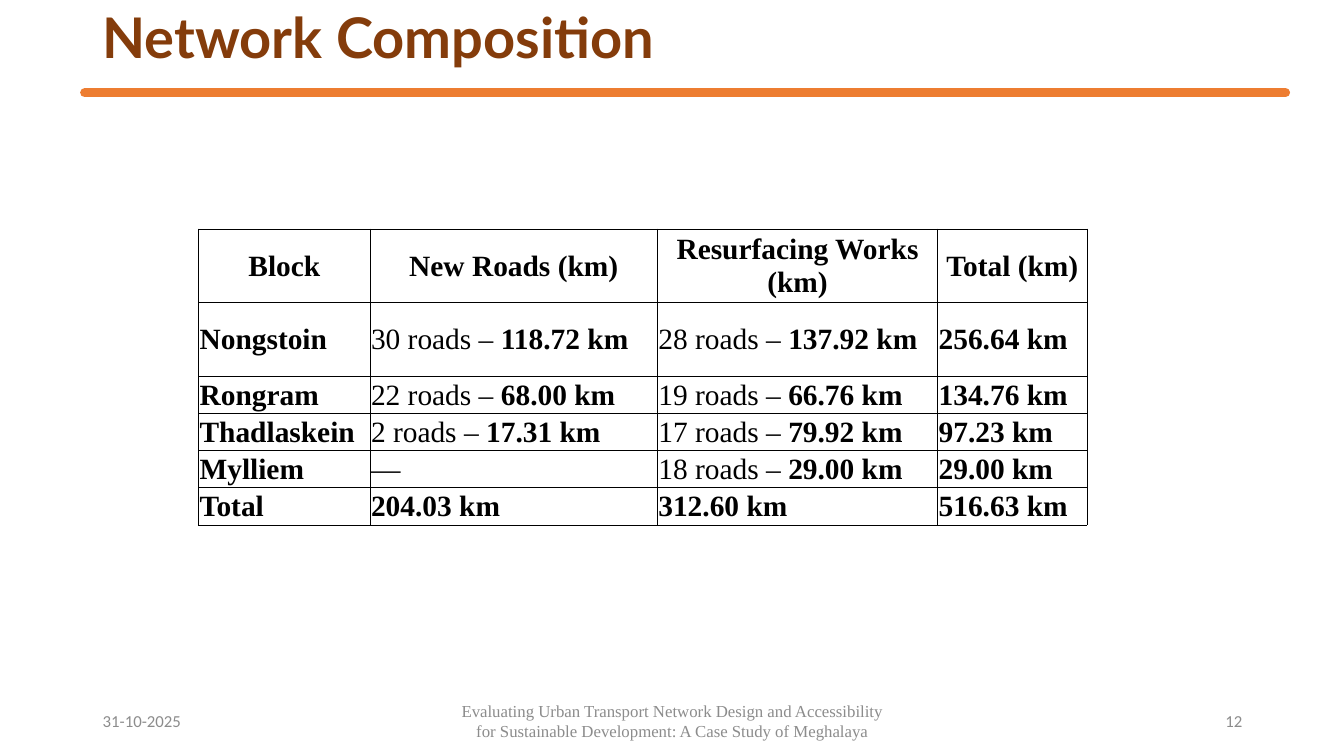
from dataclasses import dataclass

from pptx import Presentation
from pptx.dml.color import RGBColor
from pptx.enum.shapes import MSO_CONNECTOR
from pptx.enum.text import MSO_ANCHOR, PP_ALIGN
from pptx.oxml.ns import qn
from pptx.util import Inches, Pt
from lxml import etree

LEFT, CENTER, RIGHT = PP_ALIGN.LEFT, PP_ALIGN.CENTER, PP_ALIGN.RIGHT
MIDDLE = MSO_ANCHOR.MIDDLE
STRAIGHT = MSO_CONNECTOR.STRAIGHT


@dataclass(frozen=True)
class Theme:
    title: str = "843C0B"
    rule: str = "ED7D31"
    footer: str = "8C8C8C"
    ink: str = "000000"
    title_font: str = "Lato"
    body_font: str = "Calibri"
    table_font: str = "Times New Roman"
    title_size: int = 40
    table_size: int = 21
    footer_size: int = 12
    rule_width: float = 6.5
    border_width: float = 0.5


THEME = Theme()

COLUMNS = [1.7, 2.85, 2.78, 1.48]
ROWS = [0.73, 0.73, 0.37, 0.37, 0.37, 0.37]
NETWORK = [
    ["Block", "New Roads (km)", "Resurfacing Works (km)", "Total (km)"],
    ["Nongstoin", "30 roads – 118.72 km", "28 roads – 137.92 km", "256.64 km"],
    ["Rongram", "22 roads – 68.00 km", "19 roads – 66.76 km", "134.76 km"],
    ["Thadlaskein", "2 roads – 17.31 km", "17 roads – 79.92 km", "97.23 km"],
    ["Mylliem", "—", "18 roads – 29.00 km", "29.00 km"],
    ["Total", "204.03 km", "312.60 km", "516.63 km"],
]


def style_run(r, font, size, color, bold=False):
    r.font.name = font
    r.font.size = Pt(size)
    r.font.bold = bold
    r.font.color.rgb = RGBColor.from_string(color)


def add_text(s, box, text, font, size, color, align=LEFT, bold=False, spacing=1.0):
    tf = s.shapes.add_textbox(*map(Inches, box)).text_frame
    tf.word_wrap = True
    tf.vertical_anchor = MIDDLE
    p = tf.paragraphs[0]
    p.text = text
    p.alignment = align
    p.line_spacing = spacing
    style_run(p.runs[0], font, size, color, bold)


def add_rule(s, left, right, y):
    line = s.shapes.add_connector(STRAIGHT, Inches(left), Inches(y), Inches(right), Inches(y))
    line.line.color.rgb = RGBColor.from_string(THEME.rule)
    line.line.width = Pt(THEME.rule_width)
    spPr = line._element.spPr
    spPr.find(qn("a:ln")).set("cap", "rnd")
    etree.SubElement(spPr, qn("a:effectLst"))


def add_borders(cell):
    tcPr = cell._tc.get_or_add_tcPr()
    for side in ("a:lnL", "a:lnR", "a:lnT", "a:lnB"):
        ln = etree.SubElement(tcPr, qn(side), w=str(Pt(THEME.border_width)))
        fill = etree.SubElement(ln, qn("a:solidFill"))
        etree.SubElement(fill, qn("a:srgbClr"), val=THEME.ink)


def split_count(text):
    count, dash, length = text.partition("– ")
    if dash:
        return [(count + dash, False), (length, True)]
    return [(text, text != "—")]


def fill_cell(cell, text, align):
    add_borders(cell)
    cell.fill.background()
    cell.vertical_anchor = MIDDLE
    cell.margin_left = cell.margin_right = cell.margin_top = Inches(0.01)
    cell.margin_bottom = 0
    p = cell.text_frame.paragraphs[0]
    p.alignment = align
    for part, bold in split_count(text):
        r = p.add_run()
        r.text = part
        style_run(r, THEME.table_font, THEME.table_size, THEME.ink, bold)


def add_network_table(s, left, top):
    frame = s.shapes.add_table(len(ROWS), len(COLUMNS), Inches(left), Inches(top),
                               Inches(sum(COLUMNS)), Inches(sum(ROWS)))
    table = frame.table
    table.horz_banding = False
    for column, width in zip(table.columns, COLUMNS):
        column.width = Inches(width)
    for i, (row, height) in enumerate(zip(table.rows, ROWS)):
        row.height = Inches(height)
        for cell, text in zip(row.cells, NETWORK[i]):
            fill_cell(cell, text, LEFT if i else CENTER)


def add_footer(s, left, width, text, font, align):
    add_text(s, (left, 6.95, width, 0.4), text, font, THEME.footer_size, THEME.footer, align)


def main():
    prs = Presentation()
    prs.slide_width, prs.slide_height = Inches(13.33), Inches(7.5)
    s = prs.slides.add_slide(prs.slide_layouts[6])
    add_text(s, (0.92, 0.09, 12.06, 0.63), "Network Composition", THEME.title_font,
             THEME.title_size, THEME.title, bold=True, spacing=0.9)
    add_footer(s, 0.92, 3, "31-10-2025", THEME.body_font, LEFT)
    add_footer(s, 4.42, 4.5, "Evaluating Urban Transport Network Design and Accessibility "
               "for Sustainable Development: A Case Study of Meghalaya", THEME.table_font, CENTER)
    add_footer(s, 9.42, 3, "12", THEME.body_font, RIGHT)
    add_rule(s, 0.84, 12.75, 0.92)
    add_network_table(s, 1.97, 2.27)
    prs.save("out.pptx")


if __name__ == "__main__":
    main()
